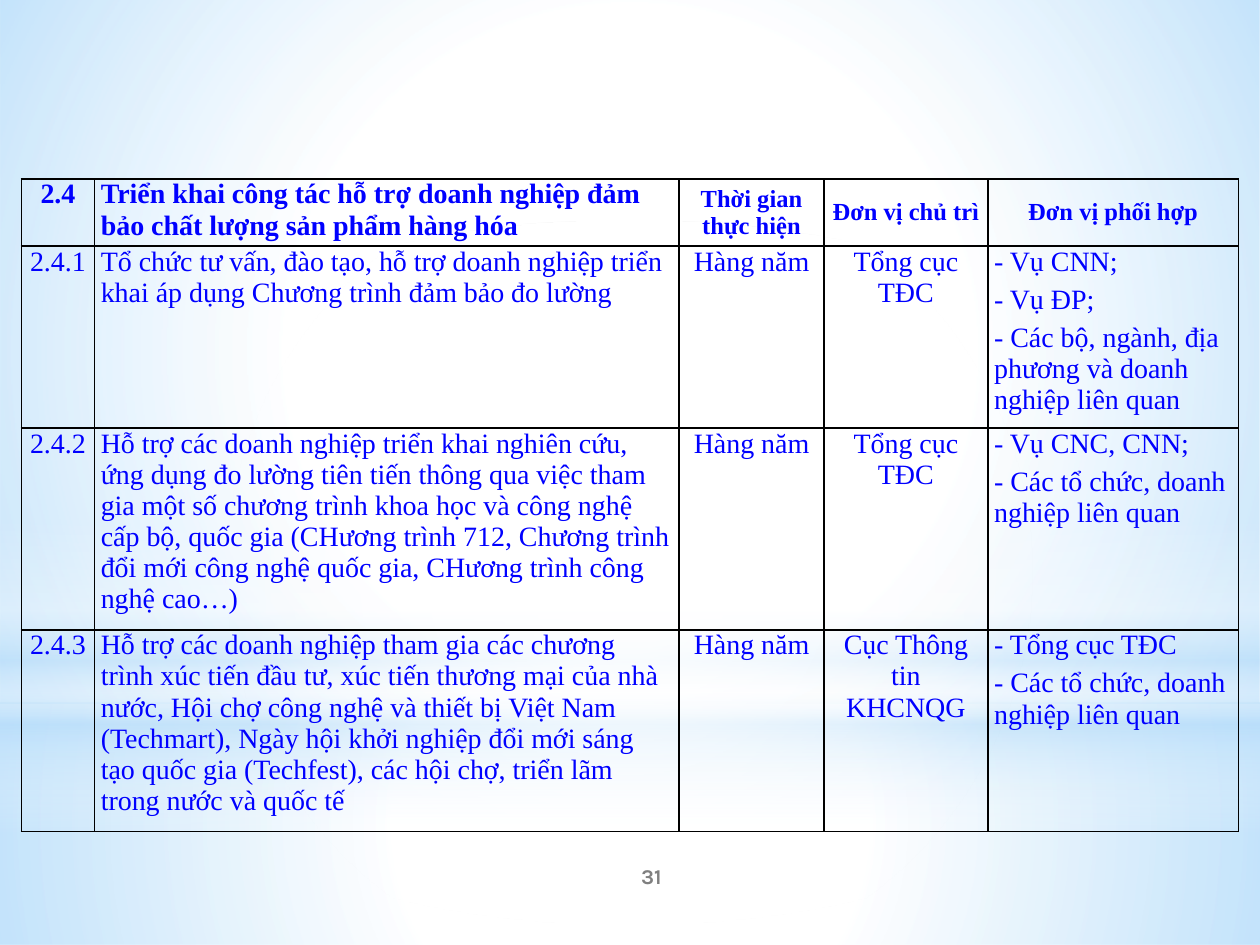
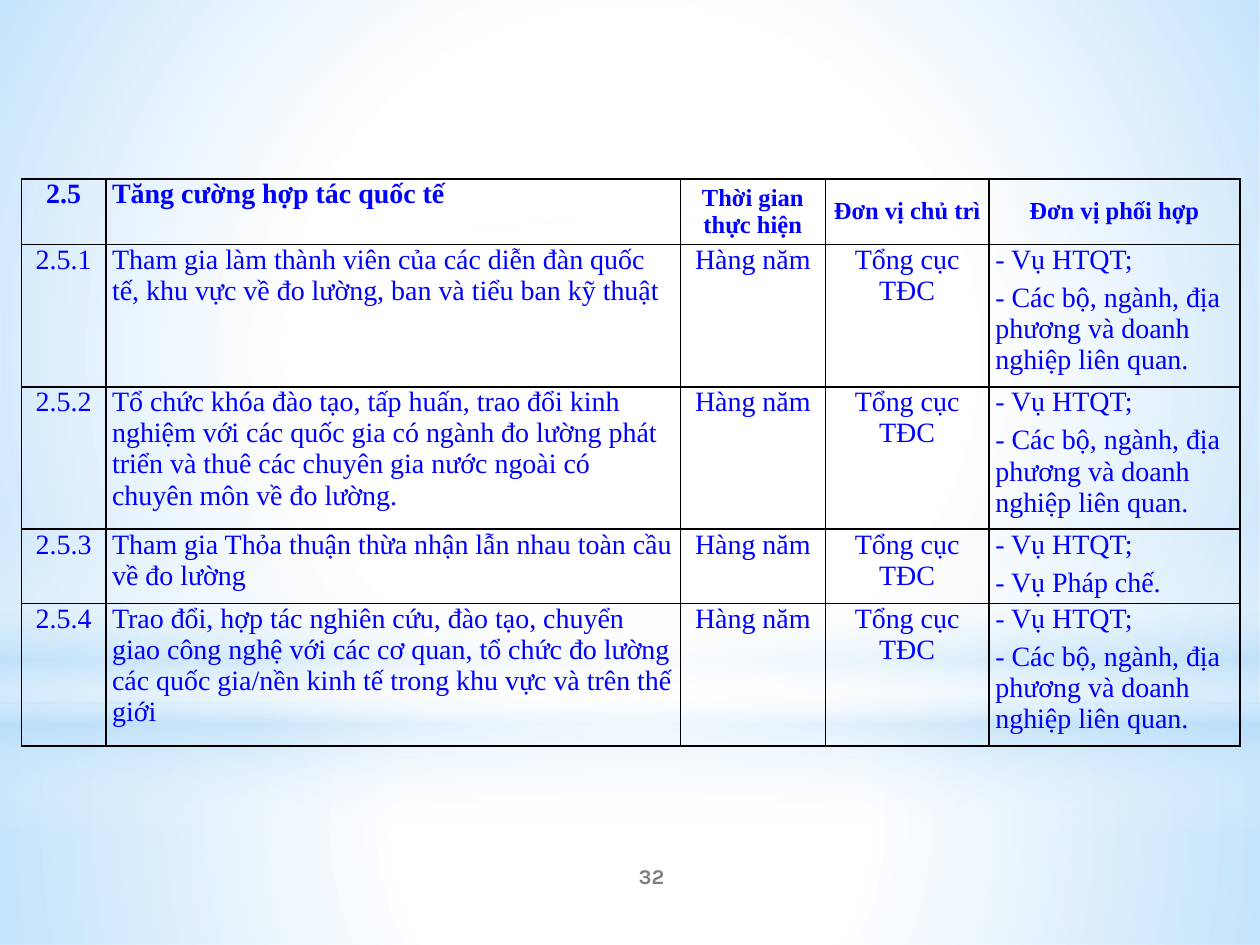
from lxml import etree
from pptx import Presentation
from pptx.dml.color import RGBColor
from pptx.enum.shapes import MSO_SHAPE
from pptx.enum.text import MSO_ANCHOR, PP_ALIGN
from pptx.oxml import parse_xml
from pptx.oxml.ns import nsdecls, qn
from pptx.util import Inches, Pt

RECTANGLE, OVAL = MSO_SHAPE.RECTANGLE, MSO_SHAPE.OVAL
LEFT, CENTER = PP_ALIGN.LEFT, PP_ALIGN.CENTER
TOP, MIDDLE = MSO_ANCHOR.TOP, MSO_ANCHOR.MIDDLE

COLORS = {
    "white": "FFFFFF",
    "sky": "B4DCFA",
    "text": "0000FF",
    "border": "000000",
    "number": "7F7F7F",
}
FORMATS = {
    "heading": {"name": "Times New Roman", "size": Pt(16), "bold": True, "color": "text"},
    "label": {"name": "Times New Roman", "size": Pt(14), "bold": True, "color": "text"},
    "body": {"name": "Times New Roman", "size": Pt(16), "bold": False, "color": "text"},
    "number": {"name": "Karla", "size": Pt(12), "bold": True, "color": "number"},
}

RADIAL = '<a:path path="circle"><a:fillToRect l="50000" t="50000" r="50000" b="50000"/></a:path>'
DOWNWARD = '<a:lin ang="5400000" scaled="0"/>'
BACKDROP = [
    (RECTANGLE, (0, 5.58, 10, 1.92), RADIAL,
     [(0, "white", 91), (37, "white", 76), (100, "sky", 79)]),
    (RECTANGLE, (0, 0, 10, 5.58), RADIAL,
     [(0, "white", 89), (48, "white", 62), (100, "sky", 79)]),
    (RECTANGLE, (0, 4.12, 10, 2.5), DOWNWARD,
     [(0, "white", 0), (29, "white", 30), (45, "sky", 40),
      (55, "white", 26), (65, "sky", 60), (100, "white", 0)]),
    (OVAL, (0, 1.75, 10, 5.58), RADIAL, [(0, "white", 100), (56, "white", 0)]),
]

NUMBER_BOX = (4.17, 6.75, 2, 0.4)
TABLE_ORIGIN = (0.17, 1.42)
SHARED_WIDTHS = [1.15, 1.3, 1.99]
COLUMN_LABELS = ["Thời gian thực hiện", "Đơn vị chủ trì", "Đơn vị phối hợp"]
COLUMN_ALIGNS = [CENTER, LEFT, CENTER, CENTER, LEFT]
YEARLY = "Hàng năm"
AGENCY = "Tổng cục TĐC"
ORGANISATIONS = "- Các tổ chức, doanh nghiệp liên quan"
MINISTRIES = "- Các bộ, ngành, địa phương và doanh nghiệp liên quan"
COOPERATION = "- Vụ HTQT;"

SECTIONS = [
    {
        "page_number": 31,
        "code": "2.4",
        "title": "Triển khai công tác hỗ trợ doanh nghiệp đảm bảo chất lượng sản phẩm hàng hóa",
        "widths": [0.58, 4.64],
        "heights": [0.53, 1.44, 1.6, 1.6],
        "tasks": [
            ("Tổ chức tư vấn, đào tạo, hỗ trợ doanh nghiệp triển khai áp dụng "
             "Chương trình đảm bảo đo lường",
             AGENCY, ["- Vụ CNN;", "- Vụ ĐP;", MINISTRIES]),
            ("Hỗ trợ các doanh nghiệp triển khai nghiên cứu, ứng dụng đo lường tiên tiến "
             "thông qua việc tham gia một số chương trình khoa học và công nghệ cấp bộ, "
             "quốc gia (CHương trình 712, Chương trình đổi mới công nghệ quốc gia, "
             "CHương trình công nghệ cao…)",
             AGENCY, ["- Vụ CNC, CNN;", ORGANISATIONS]),
            ("Hỗ trợ các doanh nghiệp tham gia các chương trình xúc tiến đầu tư, xúc tiến "
             "thương mại của nhà nước, Hội chợ công nghệ và thiết bị Việt Nam (Techmart), "
             "Ngày hội khởi nghiệp đổi mới sáng tạo quốc gia (Techfest), các hội chợ, "
             "triển lãm trong nước và quốc tế",
             "Cục Thông tin KHCNQG", ["- Tổng cục TĐC", ORGANISATIONS]),
        ],
    },
    {
        "page_number": 32,
        "code": "2.5",
        "title": "Tăng cường hợp tác quốc tế",
        "widths": [0.67, 4.56],
        "heights": [0.52, 1.13, 1.13, 0.59, 1.13],
        "tasks": [
            ("Tham gia làm thành viên của các diễn đàn quốc tế, khu vực về đo lường, "
             "ban và tiểu ban kỹ thuật",
             AGENCY, [COOPERATION, MINISTRIES + "."]),
            ("Tổ chức khóa đào tạo, tấp huấn, trao đổi kinh nghiệm với các quốc gia có "
             "ngành đo lường phát triển và thuê các chuyên gia nước ngoài có chuyên môn "
             "về đo lường.",
             AGENCY, [COOPERATION, MINISTRIES + "."]),
            ("Tham gia Thỏa thuận thừa nhận lẫn nhau toàn cầu về đo lường",
             AGENCY, [COOPERATION, "- Vụ Pháp chế."]),
            ("Trao đổi, hợp tác nghiên cứu, đào tạo, chuyển giao công nghệ với các cơ quan, "
             "tổ chức đo lường các quốc gia/nền kinh tế trong khu vực và trên thế giới",
             AGENCY, [COOPERATION, MINISTRIES + "."]),
        ],
    },
]


def inches(values):
    return [Inches(value) for value in values]


def apply_font(font, style):
    for key, value in FORMATS[style].items():
        if key == "color":
            font.color.rgb = RGBColor.from_string(COLORS[value])
        else:
            setattr(font, key, value)


def write_lines(frame, lines, style, align, gap=0):
    for index, line in enumerate(lines):
        para = frame.add_paragraph() if index else frame.paragraphs[0]
        para.alignment = align
        para.space_before = Pt(gap if index else 0)
        para.space_after = Pt(gap)
        span = para.add_run()
        span.text = line
        apply_font(span.font, style)


def add_backdrop(page):
    for kind, box, direction, stops in BACKDROP:
        shape = page.shapes.add_shape(kind, *inches(box))
        shape.shadow.inherit = False
        shape.fill.background()
        shape.line.fill.background()
        marks = "".join(
            f'<a:gs pos="{position * 1000}"><a:srgbClr val="{COLORS[color]}">'
            f'<a:alpha val="{alpha * 1000}"/></a:srgbClr></a:gs>'
            for position, color, alpha in stops)
        gradient = parse_xml(
            f'<a:gradFill {nsdecls("a")} rotWithShape="1">'
            f'<a:gsLst>{marks}</a:gsLst>{direction}</a:gradFill>')
        properties = shape.element.spPr
        properties.replace(properties.find(qn("a:noFill")), gradient)


def add_page_number(page, box, number):
    frame = page.shapes.add_textbox(*inches(box)).text_frame
    frame.word_wrap = True
    frame.vertical_anchor = MIDDLE
    write_lines(frame, [str(number)], "number", CENTER)


def add_borders(cell):
    properties = cell._tc.get_or_add_tcPr()
    for side in ("lnL", "lnR", "lnT", "lnB"):
        line = etree.SubElement(properties, qn(f"a:{side}"), w=str(Pt(1)))
        solid = etree.SubElement(line, qn("a:solidFill"))
        etree.SubElement(solid, qn("a:srgbClr"), val=COLORS["border"])


def fill_cell(cell, lines, style, align, anchor):
    add_borders(cell)
    cell.fill.background()
    cell.margin_left = cell.margin_right = Inches(0.05)
    cell.margin_top = cell.margin_bottom = 0
    cell.vertical_anchor = anchor
    write_lines(cell.text_frame, lines, style, align, gap=2)


def add_task_table(page, origin, section):
    widths = section["widths"] + SHARED_WIDTHS
    heights = section["heights"]
    box = (*origin, sum(widths), sum(heights))
    table = page.shapes.add_table(len(heights), len(widths), *inches(box)).table
    table.first_row = table.horz_banding = False
    for column, width in zip(table.columns, widths):
        column.width = Inches(width)
    for row, height in zip(table.rows, heights):
        row.height = Inches(height)

    for index, text in enumerate([section["code"], section["title"]]):
        fill_cell(table.cell(0, index), [text], "heading", COLUMN_ALIGNS[index], TOP)
    for index, text in enumerate(COLUMN_LABELS, start=2):
        fill_cell(table.cell(0, index), [text], "label", CENTER, MIDDLE)
    for number, (task, lead, partners) in enumerate(section["tasks"], start=1):
        entries = [[f'{section["code"]}.{number}'], [task], [YEARLY], [lead], partners]
        for index, lines in enumerate(entries):
            fill_cell(table.cell(number, index), lines, "body", COLUMN_ALIGNS[index], TOP)


def add_section_page(deck, section):
    page = deck.slides.add_slide(deck.slide_layouts[6])
    add_backdrop(page)
    add_page_number(page, NUMBER_BOX, section["page_number"])
    add_task_table(page, TABLE_ORIGIN, section)


def main():
    deck = Presentation()
    deck.slide_width, deck.slide_height = inches((10, 7.5))
    for section in SECTIONS:
        add_section_page(deck, section)
    deck.save("out.pptx")


if __name__ == "__main__":
    main()
